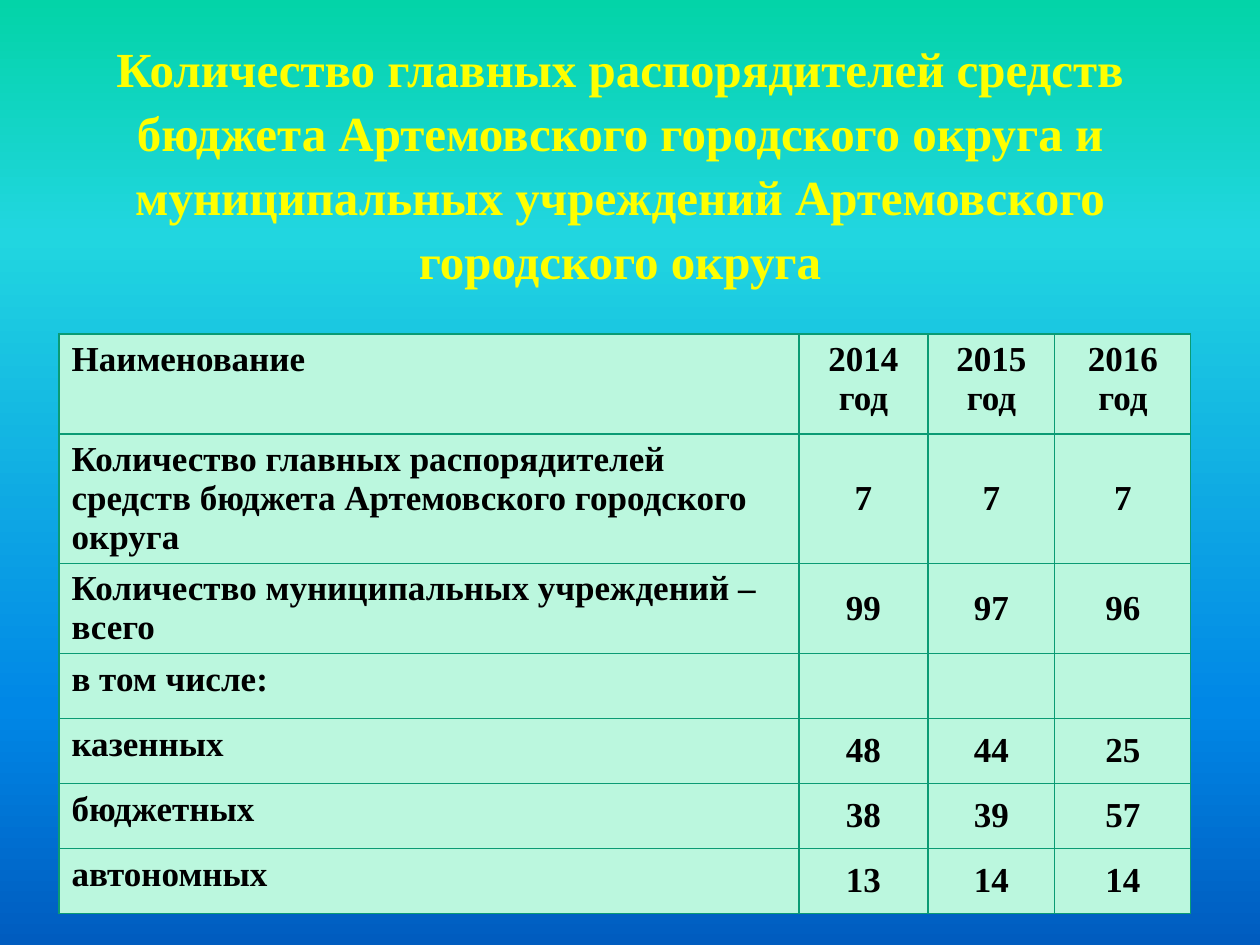
from dataclasses import dataclass
from lxml.etree import SubElement
from pptx import Presentation
from pptx.dml.color import RGBColor
from pptx.enum.text import MSO_ANCHOR, MSO_AUTO_SIZE, PP_ALIGN
from pptx.oxml.ns import qn
from pptx.util import Pt

SCALE = 914400 / 126


def px(size):
    return round(size * SCALE)


@dataclass(frozen=True)
class Theme:
    font: str = "Times New Roman"
    title: str = "FFFF00"
    ink: str = "000000"
    cell: str = "BBF7DE"
    line: str = "0A9B74"
    stops: tuple = ((0, "03D4A8"), (25, "21D6E0"), (75, "0087E6"), (100, "005CBF"))
    big: int = 28
    mid: int = 20
    rule: float = 0.75


def write(frame, text, font, size, color, align=PP_ALIGN.LEFT, space=None):
    para = frame.paragraphs[0]
    para.alignment = align
    para.line_spacing = space
    run = para.add_run()
    run.text = text
    run.font.name = font
    run.font.size = Pt(size)
    run.font.bold = True
    run.font.color.rgb = RGBColor.from_string(color)


class Deck:
    def __init__(self, theme):
        self.theme = theme
        self.show = Presentation()
        self.show.slide_width = px(1260)
        self.show.slide_height = px(945)
        self.slide = self.show.slides.add_slide(self.show.slide_layouts[5])

    def back(self):
        fill = self.slide.background.fill
        fill.gradient()
        fill.gradient_angle = 270
        stops = next(self.slide.element.iter(qn("a:gsLst")))
        for old in list(stops):
            stops.remove(old)
        for place, color in self.theme.stops:
            stop = SubElement(stops, qn("a:gs"), pos=str(place * 1000))
            SubElement(stop, qn("a:srgbClr"), val=color)

    def title(self, text, left, top, width, height):
        shape = self.slide.shapes.title
        shape.left, shape.top = px(left), px(top)
        shape.width, shape.height = px(width), px(height)
        frame = shape.text_frame
        frame.word_wrap = True
        frame.auto_size = MSO_AUTO_SIZE.NONE
        frame.vertical_anchor = MSO_ANCHOR.BOTTOM
        look = self.theme
        write(frame, text, font=look.font, size=look.big, color=look.title,
              align=PP_ALIGN.CENTER, space=1.09)

    def edge(self, cell):
        props = cell._tc.get_or_add_tcPr()
        for spot, name in enumerate(("a:lnL", "a:lnR", "a:lnT", "a:lnB")):
            line = SubElement(props, qn(name), w=str(Pt(self.theme.rule)))
            fill = SubElement(line, qn("a:solidFill"))
            SubElement(fill, qn("a:srgbClr"), val=self.theme.line)
            props.insert(spot, line)

    def table(self, data, left, top, cols, rows):
        look = self.theme
        grid = self.slide.shapes.add_table(
            len(rows), len(cols), px(left), px(top), px(sum(cols)), px(sum(rows))).table
        for col, width in zip(grid.columns, cols):
            col.width = px(width)
        for row, height in zip(grid.rows, rows):
            row.height = px(height)
        for r, line in enumerate(data):
            for c, text in enumerate(line):
                cell = grid.cell(r, c)
                cell.fill.solid()
                cell.fill.fore_color.rgb = RGBColor.from_string(look.cell)
                self.edge(cell)
                if r and c:
                    cell.vertical_anchor = MSO_ANCHOR.MIDDLE
                if text:
                    write(cell.text_frame, text, font=look.font, size=look.mid,
                          color=look.ink,
                          align=PP_ALIGN.CENTER if c else PP_ALIGN.LEFT)


def main():
    deck = Deck(Theme())
    deck.back()
    deck.title(
        "Количество главных распорядителей средств бюджета Артемовского городского "
        "округа и муниципальных учреждений Артемовского городского округа",
        29, 26, 1182, 270)
    data = (
        ("Наименование", "2014 год", "2015 год", "2016 год"),
        ("Количество главных распорядителей средств бюджета Артемовского "
         "городского округа", "7", "7", "7"),
        ("Количество муниципальных учреждений – всего", "99", "97", "96"),
        ("в том числе:", "", "", ""),
        ("казенных", "48", "44", "25"),
        ("бюджетных", "38", "39", "57"),
        ("автономных", "13", "14", "14"),
    )
    deck.table(data, 59, 334, cols=(740, 129, 127, 136), rows=(100, 113) + (65,) * 5)
    deck.show.save("out.pptx")


if __name__ == "__main__":
    main()
